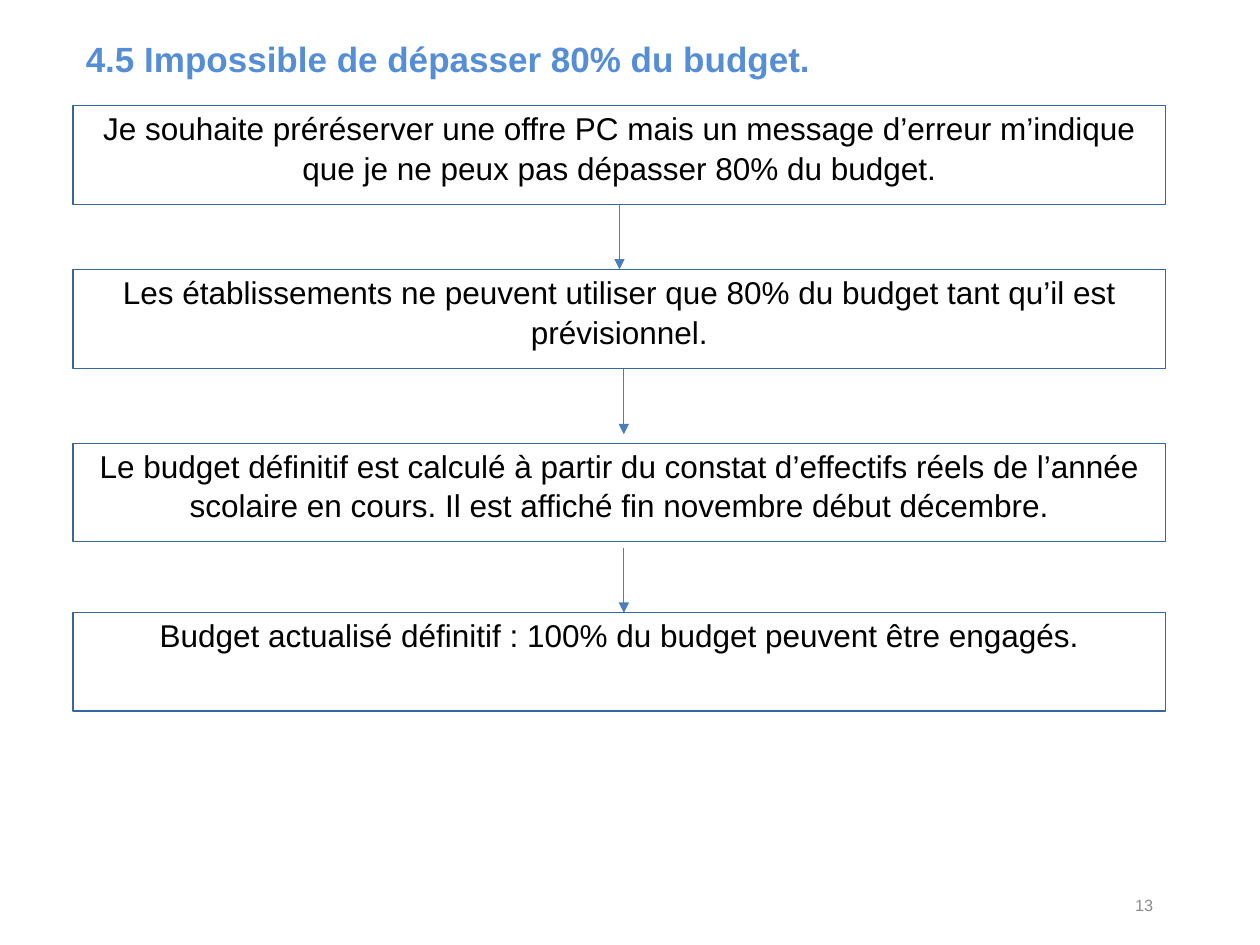
from lxml import etree
from pptx import Presentation
from pptx.dml.color import RGBColor
from pptx.enum import shapes, text
from pptx.oxml import ns
from pptx.util import Pt

SKY = RGBColor(0x55, 0x8E, 0xD5)
EDGE = RGBColor(0x34, 0x65, 0xA4)
STEM = RGBColor(0x4B, 0x7E, 0xBC)
BLACK = RGBColor(0, 0, 0)
GREY = RGBColor(0x8B, 0x8B, 0x8B)

TOP, MID = text.MSO_ANCHOR.TOP, text.MSO_ANCHOR.MIDDLE
LEFT, CENTRE = text.PP_ALIGN.LEFT, text.PP_ALIGN.CENTER

STEPS = [
    (60.5, "Je souhaite préréserver une offre PC mais un message d’erreur m’indique que je ne peux pas dépasser 80% du budget."),
    (154.2, "Les établissements ne peuvent utiliser que 80% du budget tant qu’il est prévisionnel."),
    (253.4, "Le budget définitif est calculé à partir du constat d’effectifs réels de l’année scolaire en cours. Il est affiché fin novembre début décembre."),
    (350, "Budget actualisé définitif : 100% du budget peuvent être engagés."),
]
ARROWS = [(354, 116.8), (356.5, 211), (356.5, 313)]


def assign(item, values):
    for name, value in values.items():
        setattr(item, name, value)


def place(shape, box):
    names = ("left", "top", "width", "height")
    assign(shape, dict(zip(names, map(Pt, box))))


def write(shape, words, font, frame, align=LEFT, space=1.05):
    body = shape.text_frame
    body.text = words
    assign(body, {"word_wrap": True, "auto_size": text.MSO_AUTO_SIZE.NONE, **frame})
    para = body.paragraphs[0]
    assign(para, {"alignment": align, "line_spacing": space,
                  "space_before": Pt(0)})
    colour = font.pop("colour")
    assign(para.runs[0].font, {"name": "Arial", **font})
    para.runs[0].font.color.rgb = colour


def add_head(slide, box):
    title = slide.shapes.title
    place(title, box)
    write(title, "4.5 Impossible de dépasser 80% du budget.",
          {"size": Pt(20), "bold": True, "colour": SKY},
          {"vertical_anchor": TOP})


def add_step(slide, box, words):
    step = slide.shapes.add_shape(shapes.MSO_SHAPE.RECTANGLE, *map(Pt, box))
    step.shadow.inherit = False
    step.fill.background()
    step.line.color.rgb = EDGE
    step.line.width = Pt(0.75)
    write(step, words, {"size": Pt(18), "colour": BLACK},
          {"vertical_anchor": TOP, "margin_left": 0, "margin_right": 0,
           "margin_top": Pt(0.75), "margin_bottom": 0}, CENTRE)


def add_arrow(slide, left, top, drop):
    arrow = slide.shapes.add_connector(
        shapes.MSO_CONNECTOR.STRAIGHT, *map(Pt, (left, top, left, top + drop)))
    arrow.line.color.rgb = STEM
    arrow.line.width = Pt(0.75)
    etree.SubElement(arrow.line._get_or_add_ln(), ns.qn("a:tailEnd"), type="triangle")
    etree.SubElement(arrow._element.spPr, ns.qn("a:effectLst"))


def add_flow(slide, left, width, height, drop):
    for top, words in STEPS:
        add_step(slide, (left, top, width, height), words)
    for mid, top in ARROWS:
        add_arrow(slide, mid, top, drop)


def add_foot(slide, box):
    foot = slide.shapes.add_textbox(*map(Pt, box))
    write(foot, "13", {"size": Pt(9.3), "colour": GREY},
          {"vertical_anchor": MID}, space=1)


def main():
    deck = Presentation()
    assign(deck, {"slide_width": Pt(720), "slide_height": Pt(540)})
    slide = deck.slides.add_slide(deck.slide_layouts[5])
    add_head(slide, (41.8, 16.6, 635, 31.7))
    add_flow(slide, 41.8, 624.2, 56.3, 37.2)
    add_foot(slide, (641.5, 503.3, 35.3, 28.1))
    deck.save("out.pptx")


if __name__ == "__main__":
    main()
